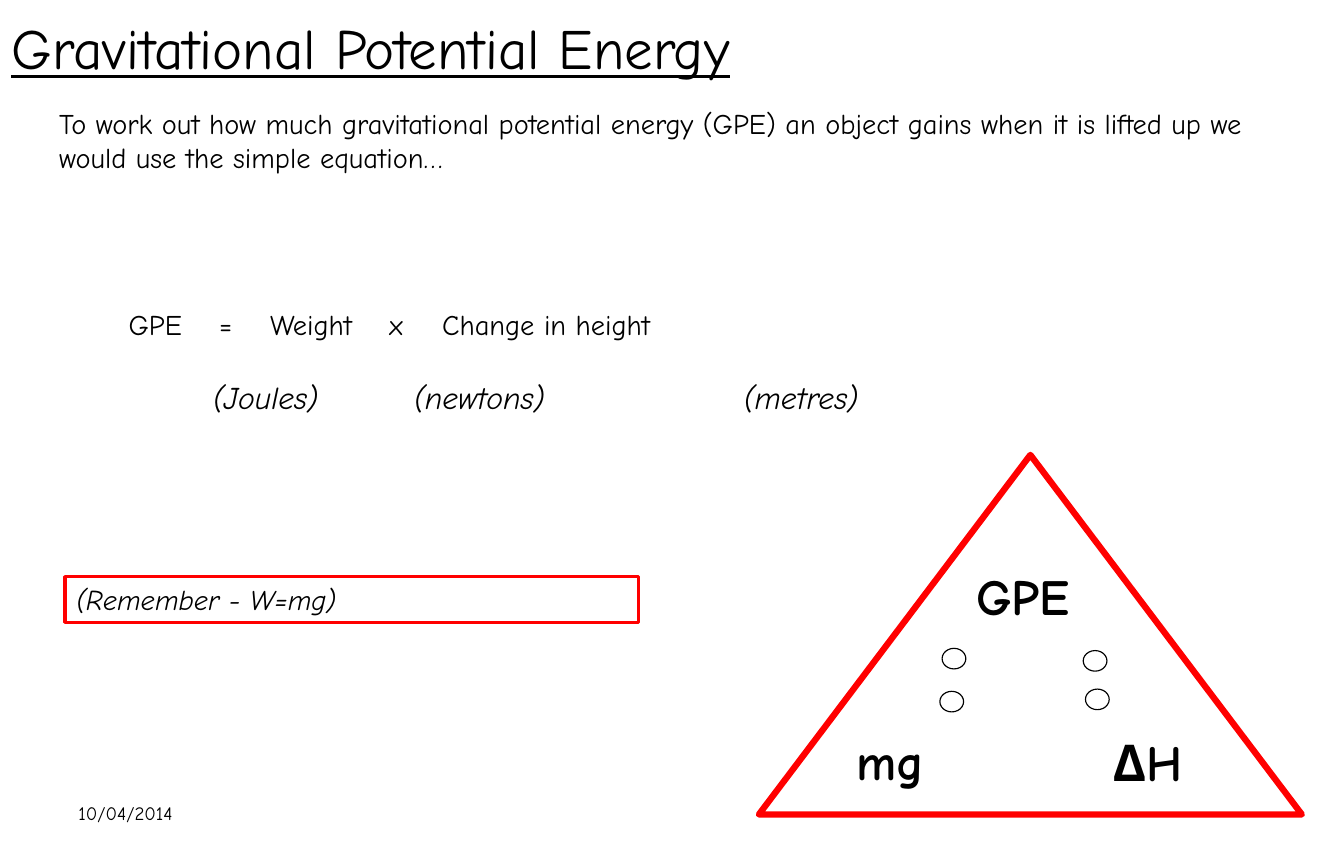
"""Builds the slide on gravitational potential energy with its formula triangle."""
import pptx
import pptx.dml.color
import pptx.enum.shapes
import pptx.enum.text
import pptx.oxml.ns
import pptx.util
from lxml import etree
from pptx.util import Cm

SHAPE = pptx.enum.shapes.MSO_SHAPE
FONT = "Comic Neue"
BLACK, WHITE, RED = "000000", "FFFFFF", "FF0000"

TITLE = "Gravitational Potential Energy"
INTRO = ("To work out how much gravitational potential energy (GPE) an object gains "
         "when it is lifted up we would use the simple equation…")
EQUATION = ["GPE", "=", "Weight", "x", "Change in height"]
EQUATION_TABS = [2.02, 3.16, 5.82, 7]
UNITS = ["(Joules)", "(newtons)", "(metres)"]
UNIT_TABS = [4.49, 11.85]
REMINDER = "(Remember - W=mg)"
DATE = "10/04/2014"

TRIANGLE = (16.94, 10.16, 12.12, 8.03)
TRIANGLE_LABELS = [
    ("GPE", (21.54, 12.5, 3.53, 1.6)),
    ("ΔH", (24.59, 16.21, 3.15, 1.6)),
    ("mg", (18.87, 16.18, 2.46, 1.6)),
]
DOT_SIZE = (0.53, 0.46)
DOTS = [(21.03, 14.48), (20.98, 15.44), (24.18, 14.53), (24.23, 15.39)]


def color(value):
    return pptx.dml.color.RGBColor.from_string(value)


def write(shape, text, size, bold=False, italic=False, underline=False,
          anchor=pptx.enum.text.MSO_ANCHOR.TOP):
    frame = shape.text_frame
    frame.word_wrap = True
    frame.auto_size = pptx.enum.text.MSO_AUTO_SIZE.NONE
    frame.vertical_anchor = anchor
    paragraph = frame.paragraphs[0]
    paragraph.alignment = pptx.enum.text.PP_ALIGN.LEFT
    run = paragraph.add_run()
    run.text = text
    font = run.font
    font.name, font.size = FONT, pptx.util.Pt(size)
    font.bold, font.italic, font.underline = bold, italic, underline
    font.color.rgb = color(BLACK)
    return paragraph


def add_text(shapes, box, text, size, **style):
    return write(shapes.add_textbox(*map(Cm, box)), text, size, **style)


def add_columns(shapes, box, words, stops, size, **style):
    paragraph = add_text(shapes, box, "\t".join(words), size, **style)
    properties = paragraph._p.get_or_add_pPr()
    tabs = etree.SubElement(properties, pptx.oxml.ns.qn("a:tabLst"))
    for stop in stops:
        etree.SubElement(tabs, pptx.oxml.ns.qn("a:tab"), pos=str(int(Cm(stop))), algn="l")


def add_outlined(shapes, kind, box, line, width, fill=None):
    shape = shapes.add_shape(kind, *map(Cm, box))
    shape.shadow.inherit = False
    if fill:
        shape.fill.solid()
        shape.fill.fore_color.rgb = color(fill)
    else:
        shape.fill.background()
    shape.line.color.rgb = color(line)
    shape.line.width = pptx.util.Pt(width)
    return shape


def main():
    deck = pptx.Presentation()
    deck.slide_width, deck.slide_height = Cm(30), Cm(19.05)
    slide = deck.slides.add_slide(deck.slide_layouts[5])
    shapes = slide.shapes
    middle = pptx.enum.text.MSO_ANCHOR.MIDDLE

    title = shapes.title
    title.left, title.top, title.width, title.height = map(Cm, (0, 0, 27.5, 2.1))
    write(title, TITLE, 36, underline=True, anchor=middle)

    add_text(shapes, (1.5, 17.65, 7, 1.02), DATE, 12, anchor=middle)
    add_text(shapes, (1.07, 2.24, 27.64, 1.8), INTRO, 18)
    add_columns(shapes, (2.62, 6.73, 24.7, 1.02), EQUATION, EQUATION_TABS, 18)
    add_columns(shapes, (4.5, 8.31, 19.8, 1.09), UNITS, UNIT_TABS, 20, italic=True)

    formula = shapes.add_group_shape().shapes
    add_outlined(formula, SHAPE.FLOWCHART_EXTRACT, TRIANGLE, RED, 4)
    for label, box in TRIANGLE_LABELS:
        add_text(formula, box, label, 32, bold=True)
    for position in DOTS:
        add_outlined(formula, SHAPE.OVAL, position + DOT_SIZE, BLACK, 0.75, WHITE)

    reminder = add_outlined(shapes, SHAPE.RECTANGLE, (1.45, 12.88, 12.8, 1.02), RED, 2)
    write(reminder, REMINDER, 18, italic=True)

    deck.save("out.pptx")


if __name__ == "__main__":
    main()
